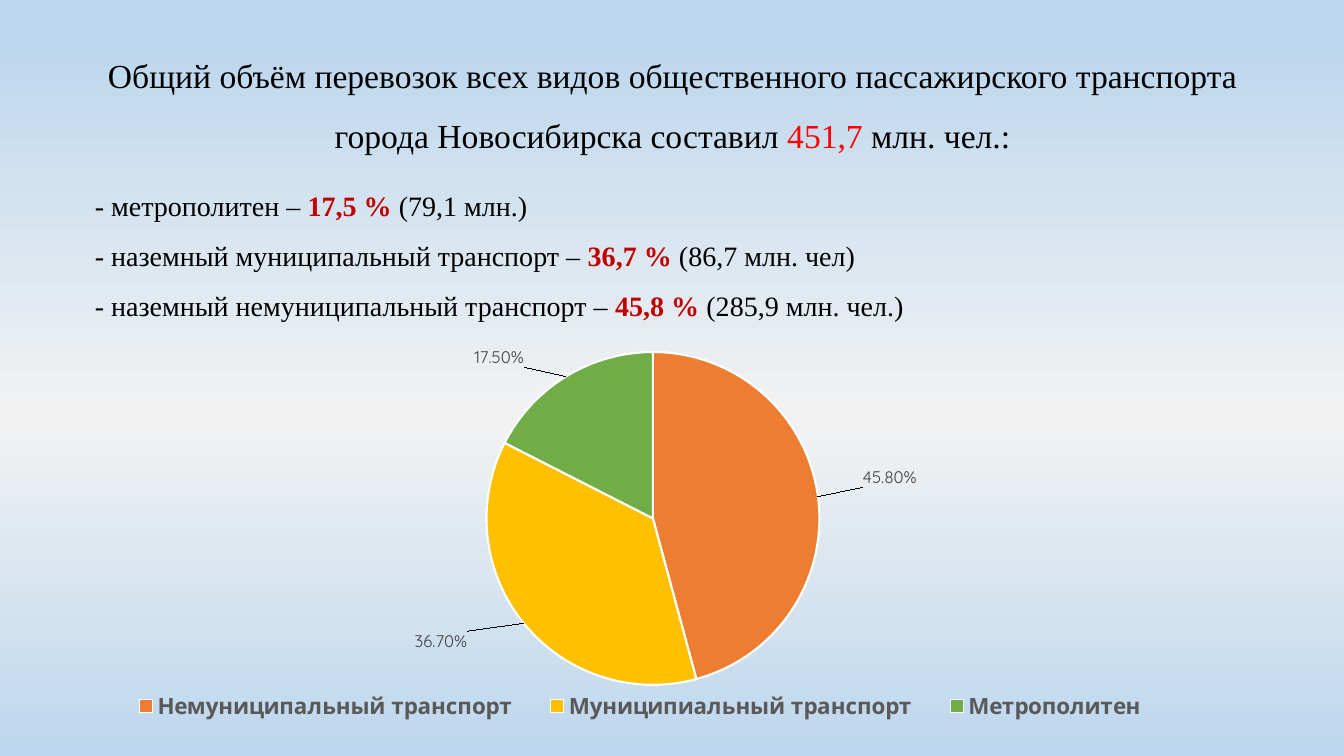
import copy

import lxml.etree
import pptx
import pptx.chart.data
import pptx.dml.color
import pptx.enum.chart
import pptx.enum.text
import pptx.oxml.ns
import pptx.util
from pptx.util import Inches

BLACK, RED, DARK_RED, GREY, WHITE = "000000", "FF0000", "C00000", "595959", "FFFFFF"
BACKGROUND = [(0.05, "BDD7EE"), (0.55, "F2F2F2"), (1, "BDD7EE")]
HEADING = [
    ("Общий объём перевозок всех видов общественного пассажирского транспорта "
     "города Новосибирска составил ", BLACK),
    ("451,7", RED),
    (" млн. чел.:", BLACK),
]
SHARES = [
    ("метрополитен", "17,5 %", "79,1 млн."),
    ("наземный муниципальный транспорт", "36,7 %", "86,7 млн. чел"),
    ("наземный немуниципальный транспорт", "45,8 %", "285,9 млн. чел."),
]
# Category, share, slice colour, label shift as a fraction of the chart
SLICES = [
    ("Немуниципальный транспорт", 0.458, "ED7D31", (0.03, -0.02)),
    ("Муниципиальный транспорт", 0.367, "FFC000", (-0.04, 0.01)),
    ("Метрополитен", 0.175, "70AD47", (-0.03, -0.01)),
]


def colour(hex_code):
    return pptx.dml.color.RGBColor.from_string(hex_code)


def paint_background(slide):
    fill = slide.background.fill
    fill.gradient()
    fill.gradient_angle = 270
    stop_list = slide.element.find(".//" + pptx.oxml.ns.qn("a:gsLst"))
    stop_list.append(copy.deepcopy(stop_list[0]))
    for stop, (position, hex_code) in zip(fill.gradient_stops, BACKGROUND):
        stop.position = position
        stop.color.rgb = colour(hex_code)


def place(holder, left, top, width, height):
    holder.left, holder.top, holder.width, holder.height = left, top, width, height
    frame = holder.text_frame
    frame.word_wrap = True
    frame.auto_size = pptx.enum.text.MSO_AUTO_SIZE.NONE
    frame.vertical_anchor = pptx.enum.text.MSO_ANCHOR.TOP
    return frame


def write_runs(paragraph, pieces, size, alignment):
    paragraph.alignment = alignment
    paragraph.line_spacing = 1.5
    paragraph.space_before = pptx.util.Pt(0)
    paragraph.font.name = "Times New Roman"
    paragraph.font.size = pptx.util.Pt(size)
    for text, hex_code in pieces:
        run = paragraph.add_run()
        run.text = text
        run.font.color.rgb = colour(hex_code)
        if hex_code == DARK_RED:
            run.font.bold = True


def add_heading(slide, left, top, width, height):
    frame = place(slide.shapes.title, left, top, width, height)
    write_runs(frame.paragraphs[0], HEADING, 24, pptx.enum.text.PP_ALIGN.CENTER)


def add_shares(slide, left, top, width, height):
    frame = place(slide.placeholders[1], left, top, width, height)
    for index, (transport, share, passengers) in enumerate(SHARES):
        paragraph = frame.add_paragraph() if index else frame.paragraphs[0]
        properties = paragraph._p.get_or_add_pPr()
        properties.set("marL", "0")
        properties.set("indent", "0")
        lxml.etree.SubElement(properties, pptx.oxml.ns.qn("a:buNone"))
        pieces = [(f"- {transport} – ", BLACK), (f"{share} ", DARK_RED),
                  (f"({passengers})", BLACK)]
        write_runs(paragraph, pieces, 20, pptx.enum.text.PP_ALIGN.LEFT)


def manual_layout(**settings):
    """Build a c:layout element; settings must follow the schema order."""
    layout = lxml.etree.Element(pptx.oxml.ns.qn("c:layout"))
    manual = lxml.etree.SubElement(layout, pptx.oxml.ns.qn("c:manualLayout"))
    for name, value in settings.items():
        lxml.etree.SubElement(manual, pptx.oxml.ns.qn(f"c:{name}"), val=str(value))
    return layout


def set_layout(parent, layout, index):
    for old in parent.findall(pptx.oxml.ns.qn("c:layout")):
        parent.remove(old)
    parent.insert(index, layout)


def style_font(font, size, hex_code, bold=False):
    font.name = "Quicksand"
    font.size = pptx.util.Pt(size)
    font.bold = bold
    font.color.rgb = colour(hex_code)


def style_slices(series):
    labels = series.data_labels
    labels.show_value = True
    labels.number_format = "0.00%"
    labels.number_format_is_linked = False
    style_font(labels.font, 12, "404040")
    for index, (_, _, hex_code, _) in enumerate(SLICES):
        point = series.points[index]
        point.format.fill.solid()
        point.format.fill.fore_color.rgb = colour(hex_code)
        point.format.line.color.rgb = colour(WHITE)
        point.format.line.width = pptx.util.Pt(1.5)
        style_font(point.data_label.font, 12, "404040")
        point.data_label.position = pptx.enum.chart.XL_LABEL_POSITION.OUTSIDE_END
    label_elements = labels._element.findall(pptx.oxml.ns.qn("c:dLbl"))
    for element, (_, _, _, (shift_x, shift_y)) in zip(label_elements, SLICES):
        set_layout(element, manual_layout(x=shift_x, y=shift_y), 1)


def add_share_pie(slide, left, top, width, height):
    data = pptx.chart.data.CategoryChartData(number_format="0.00%")
    data.categories = [name for name, *_ in SLICES]
    data.add_series("Series 1", [share for _, share, *_ in SLICES])
    chart = slide.shapes.add_chart(
        pptx.enum.chart.XL_CHART_TYPE.PIE, left, top, width, height, data).chart
    chart.has_title = False
    style_font(chart.font, 10, BLACK)
    chart.plots[0].vary_by_categories = True
    style_slices(chart.plots[0].series[0])

    chart.has_legend = True
    legend = chart.legend
    legend.position = pptx.enum.chart.XL_LEGEND_POSITION.BOTTOM
    legend.include_in_layout = False
    style_font(legend.font, 16, GREY, bold=True)
    set_layout(legend._element, manual_layout(
        xMode="edge", yMode="edge", x=0.07, y=0.86, w=0.82, h=0.1), 1)
    plot_area = chart._chartSpace.find(".//" + pptx.oxml.ns.qn("c:plotArea"))
    set_layout(plot_area, manual_layout(
        layoutTarget="inner", xMode="edge", yMode="edge",
        x=0.36, y=0.07, w=0.26, h=0.79), 0)


def main():
    deck = pptx.Presentation()
    deck.slide_width, deck.slide_height = Inches(13.33), Inches(7.5)
    slide = deck.slides.add_slide(deck.slide_layouts[1])
    paint_background(slide)
    add_heading(slide, Inches(0.84), Inches(0.29), Inches(11.66), Inches(1.3))
    add_shares(slide, Inches(0.84), Inches(1.65), Inches(11.66), Inches(1.6))
    add_share_pie(slide, Inches(0.18), Inches(3.2), Inches(12.85), Inches(4.18))
    deck.save("out.pptx")


if __name__ == "__main__":
    main()
